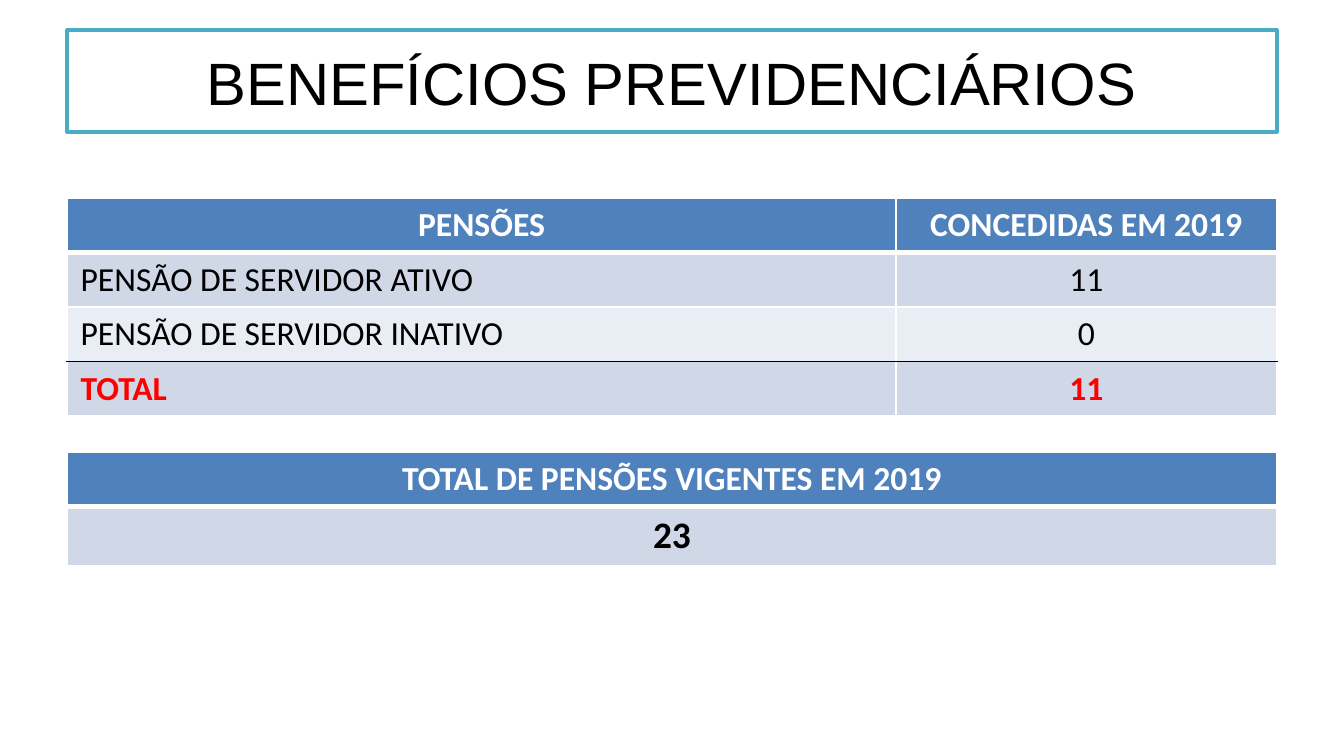
from lxml.etree import SubElement
from pptx import Presentation
from pptx.dml.color import RGBColor
from pptx.enum.text import MSO_ANCHOR, PP_ALIGN
from pptx.oxml.ns import qn
from pptx.util import Pt

WHITE = RGBColor(0xFF, 0xFF, 0xFF)
BLACK = RGBColor(0x00, 0x00, 0x00)
RED = RGBColor(0xFF, 0x00, 0x00)
TEAL = RGBColor(0x4B, 0xAC, 0xC6)
HEADER_BLUE = RGBColor(0x4F, 0x81, 0xBD)
BAND_DARK = RGBColor(0xD0, 0xD8, 0xE8)
BAND_LIGHT = RGBColor(0xE9, 0xED, 0xF4)

LEFT, WIDTH = 36, 648
ROW_HEIGHT = 29.25


def add_title(slide, text, left, top, width, height):
    title = slide.shapes.title
    title.left, title.top = Pt(left), Pt(top)
    title.width, title.height = Pt(width), Pt(height)
    title.fill.solid()
    title.fill.fore_color.rgb = WHITE
    title.line.color.rgb = TEAL
    title.line.width = Pt(2)
    frame = title.text_frame
    frame.text = text
    frame.vertical_anchor = MSO_ANCHOR.MIDDLE
    paragraph = frame.paragraphs[0]
    paragraph.alignment = PP_ALIGN.CENTER
    paragraph.font.name = "Arial"
    paragraph.font.size = Pt(32)
    paragraph.font.color.rgb = BLACK


def set_border(cell, side, color, width):
    properties = cell._tc.get_or_add_tcPr()
    line = SubElement(properties, qn(f"a:ln{side}"), w=str(Pt(width)))
    fill = SubElement(line, qn("a:solidFill"))
    SubElement(fill, qn("a:srgbClr"), val=str(color))


def format_cell(cell, text, fill, color, bold, size, alignment, top, bottom):
    for side, border in zip("LRTB", [(WHITE, 1), (WHITE, 1), top, bottom]):
        set_border(cell, side, *border)
    cell.fill.solid()
    cell.fill.fore_color.rgb = fill
    cell.text = text
    paragraph = cell.text_frame.paragraphs[0]
    paragraph.alignment = alignment
    paragraph.font.name = "Calibri"
    paragraph.font.size = Pt(size)
    paragraph.font.bold = bold
    paragraph.font.color.rgb = color


def add_benefit_table(slide, rows, column_widths, row_heights, left, top,
                      has_total=False, body_size=18, body_bold=False):
    table = slide.shapes.add_table(
        len(rows), len(column_widths), Pt(left), Pt(top),
        Pt(sum(column_widths)), Pt(sum(row_heights))).table
    for column, width in zip(table.columns, column_widths):
        column.width = Pt(width)
    for row, height in zip(table.rows, row_heights):
        row.height = Pt(height)

    total_index = len(rows) - 1 if has_total else None
    edges = [(WHITE, 1)] * (len(rows) + 1)
    edges[1] = (WHITE, 3)
    if has_total:
        edges[total_index] = (BLACK, 1)

    for row_index, row in enumerate(rows):
        is_header = row_index == 0
        is_total = row_index == total_index
        band = BAND_DARK if row_index % 2 else BAND_LIGHT
        fill = HEADER_BLUE if is_header else band
        color = WHITE if is_header else RED if is_total else BLACK
        bold = is_header or is_total or body_bold
        size = 18 if is_header else body_size
        for column_index, text in enumerate(row):
            is_label = len(row) > 1 and column_index == 0 and not is_header
            alignment = PP_ALIGN.LEFT if is_label else PP_ALIGN.CENTER
            format_cell(table.cell(row_index, column_index), text, fill, color,
                        bold, size, alignment,
                        edges[row_index], edges[row_index + 1])
    return table


def main():
    presentation = Presentation()
    presentation.slide_width, presentation.slide_height = Pt(720), Pt(405)
    slide = presentation.slides.add_slide(presentation.slide_layouts[5])

    add_title(slide, "BENEFÍCIOS PREVIDENCIÁRIOS", LEFT, 16.2, WIDTH, 54.5)
    add_benefit_table(
        slide,
        [("PENSÕES", "CONCEDIDAS EM 2019"),
         ("PENSÃO DE SERVIDOR ATIVO", "11"),
         ("PENSÃO DE SERVIDOR INATIVO", "0"),
         ("TOTAL", "11")],
        [444, WIDTH - 444], [ROW_HEIGHT] * 4, LEFT, 106, has_total=True)
    pensions_in_force = add_benefit_table(
        slide,
        [("TOTAL DE PENSÕES VIGENTES EM 2019",), ("23",)],
        [WIDTH], [ROW_HEIGHT, 31.25], LEFT, 242, body_size=20, body_bold=True)
    pensions_in_force.cell(1, 0).vertical_anchor = MSO_ANCHOR.MIDDLE

    presentation.save("out.pptx")


if __name__ == "__main__":
    main()
